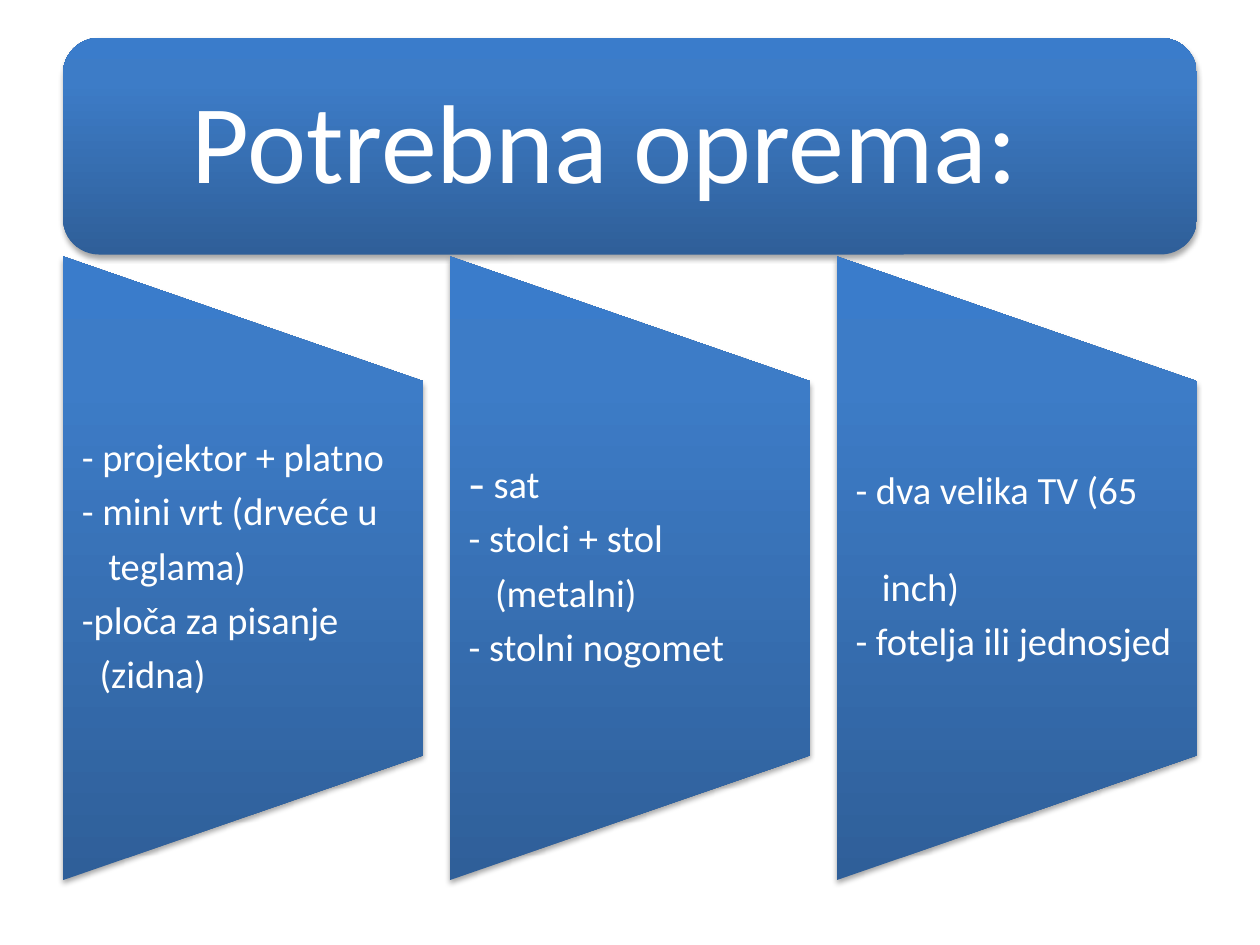
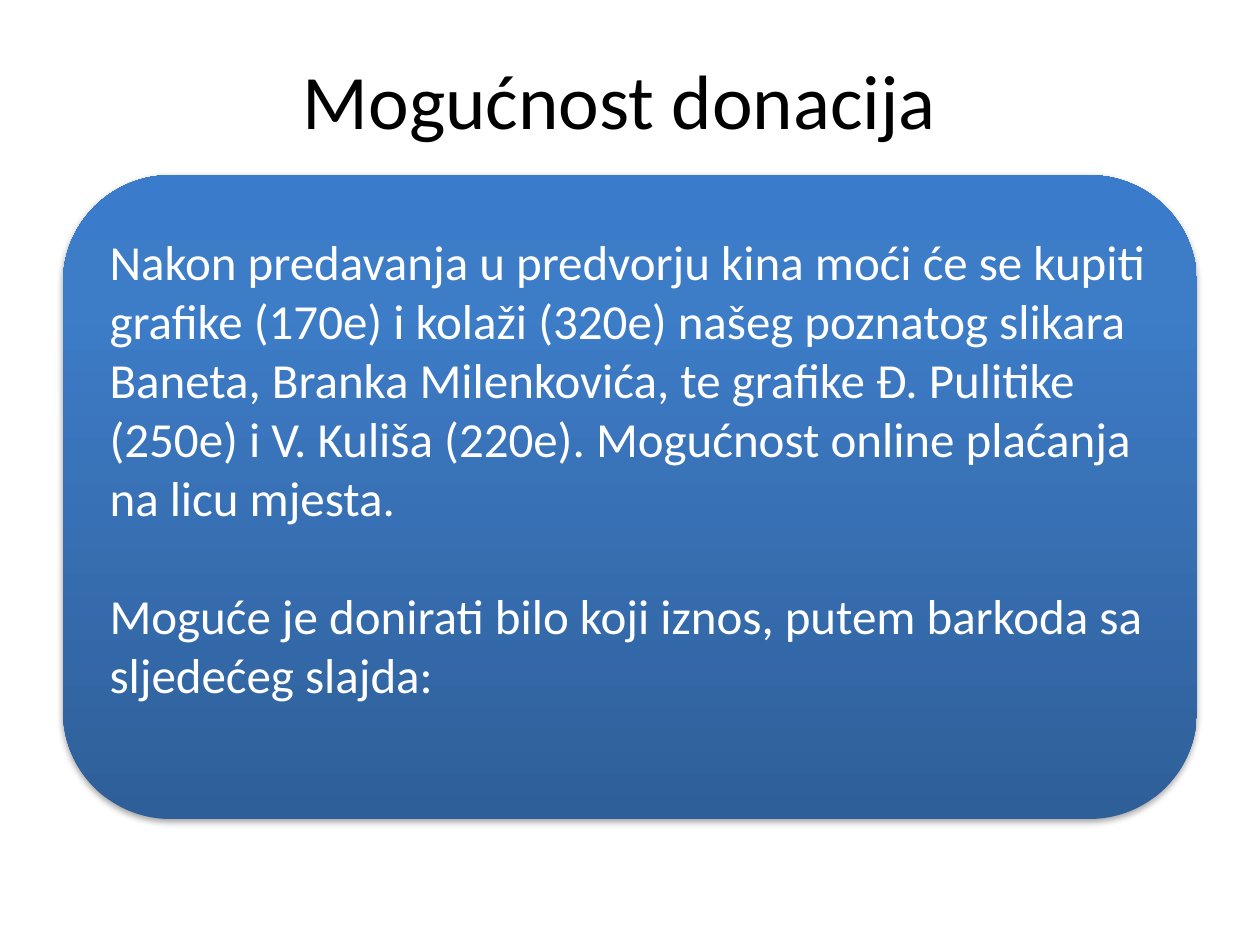
from pptx import Presentation
from pptx.dml.color import RGBColor
from pptx.enum.shapes import MSO_SHAPE
from pptx.enum.text import MSO_ANCHOR, PP_ALIGN
from pptx.oxml import parse_xml
from pptx.util import Inches, Pt

HUE = {"deep": "2F5F99", "mid": "3D7CC7", "light": "3A7CCB",
       "shade": "000000", "white": "FFFFFF", "black": "000000"}
FONT = "Calibri"
NS = 'xmlns:a="http://schemas.openxmlformats.org/drawingml/2006/main"'
STOPS = [("deep", 0), ("mid", 80), ("light", 100)]


def add_panel(slide, kind, left, top, width, height, turn=0):
    panel = slide.shapes.add_shape(
        kind, Inches(left), Inches(top), Inches(width), Inches(height))
    panel.rotation = turn
    panel.line.fill.background()
    panel.fill.background()
    panel.shadow.inherit = False
    stops = "".join(f'<a:gs pos="{pos * 1000}"><a:srgbClr val="{HUE[name]}"/></a:gs>'
                    for name, pos in STOPS)
    grad = parse_xml(f'<a:gradFill {NS} rotWithShape="0"><a:gsLst>{stops}</a:gsLst>'
                     '<a:lin ang="16200000" scaled="0"/></a:gradFill>')
    props = panel.fill._xPr
    props.replace(props.find("{*}noFill"), grad)
    props.find("{*}effectLst").append(parse_xml(
        f'<a:outerShdw {NS} blurRad="40000" dist="23000" dir="5400000" rotWithShape="0">'
        f'<a:srgbClr val="{HUE["shade"]}"><a:alpha val="35000"/></a:srgbClr></a:outerShdw>'))


def add_text(slide, rect, lines, size, pads, hue="white", align=PP_ALIGN.LEFT, space=1.0):
    box = slide.shapes.add_textbox(*[Inches(n) for n in rect])
    frame = box.text_frame
    frame.word_wrap = True
    frame.vertical_anchor = MSO_ANCHOR.MIDDLE
    frame.margin_left, frame.margin_top, frame.margin_right, frame.margin_bottom = [
        Inches(n) for n in pads]
    frame.text = "\n".join(text for text, dent, gap in lines)
    for para, (text, dent, gap) in zip(frame.paragraphs, lines):
        para.alignment = align
        para.line_spacing = space
        para.space_after = Pt(gap)
        if dent:
            para._p.get_or_add_pPr().set("marL", str(Inches(dent)))
        for run in para.runs:
            run.font.name = FONT
            run.font.size = Pt(size)
            run.font.color.rgb = RGBColor.from_string(HUE[hue])
    return frame


deck = Presentation()
deck.slide_width, deck.slide_height = Inches(10), Inches(7.5)
blank = deck.slide_layouts[6]

gear = deck.slides.add_slide(blank)
add_panel(gear, MSO_SHAPE.ROUNDED_RECTANGLE, 0.5, 0.3, 9, 1.72)
add_text(gear, (0.58, 0.39, 8.83, 1.55), [("Potrebna oprema:", 0, 0)], 64,
         (0.27, 0.27, 0.66, 0.27), align=PP_ALIGN.CENTER, space=0.9)

GAP = 7.3
lists = [
    [("- projektor + platno", 0, GAP), ("- mini vrt (drveće u", 0, GAP),
     ("teglama)", 0.21, GAP), ("-ploča za pisanje", 0, GAP), ("(zidna)", 0.14, 0)],
    [("- sat", 0, GAP), ("- stolci + stol", 0, GAP),
     ("(metalni)", 0.21, GAP), ("- stolni nogomet", 0, 0)],
    [("- dva velika TV (65", 0, GAP + 24), ("inch)", 0.21, GAP),
     ("- fotelja ili jednosjed", 0, 0)],
]
wide, tall, step = 2.86, 4.95, 3.07
frames = []
for i, lines in enumerate(lists):
    left = 0.5 + i * step
    add_panel(gear, MSO_SHAPE.FLOWCHART_MANUAL_OPERATION,
              left - (tall - wide) / 2, 3.08, tall, wide, 270)
    frames.append(add_text(gear, (left, 3.02, wide, 2.97), lines, 22,
                           (0.15, 0, 0.15, 0), space=0.9))

clock = frames[1].paragraphs[0]
dash = clock.runs[0]
dash.text = "- "
dash.font.name = "Cabin"
word = clock.add_run()
word.text = "sat"
word.font.name = FONT
word.font.size = dash.font.size
word.font.color.rgb = dash.font.color.rgb

gifts = deck.slides.add_slide(blank)
add_text(gifts, (0.5, 0.29, 9, 0.99), [("Mogućnost donacija", 0, 0)], 44,
         (0.1, 0.05, 0.26, 0.05), "black", PP_ALIGN.CENTER)
add_panel(gifts, MSO_SHAPE.ROUNDED_RECTANGLE, 0.5, 1.39, 9, 5.11)
add_text(gifts, (0.75, 1.64, 8.5, 4.61), [
    ("Nakon predavanja u predvorju kina moći će se kupiti grafike (170e) i kolaži (320e) "
     "našeg poznatog slikara Baneta, Branka Milenkovića, te grafike Đ. Pulitike (250e) "
     "i V. Kuliša (220e). Mogućnost online plaćanja na licu mjesta.", 0, 34),
    ("Moguće je donirati bilo koji iznos, putem barkoda sa sljedećeg slajda:", 0, 0),
], 28, (0.12, 0.12, 0.12, 0.59))

deck.save("out.pptx")
